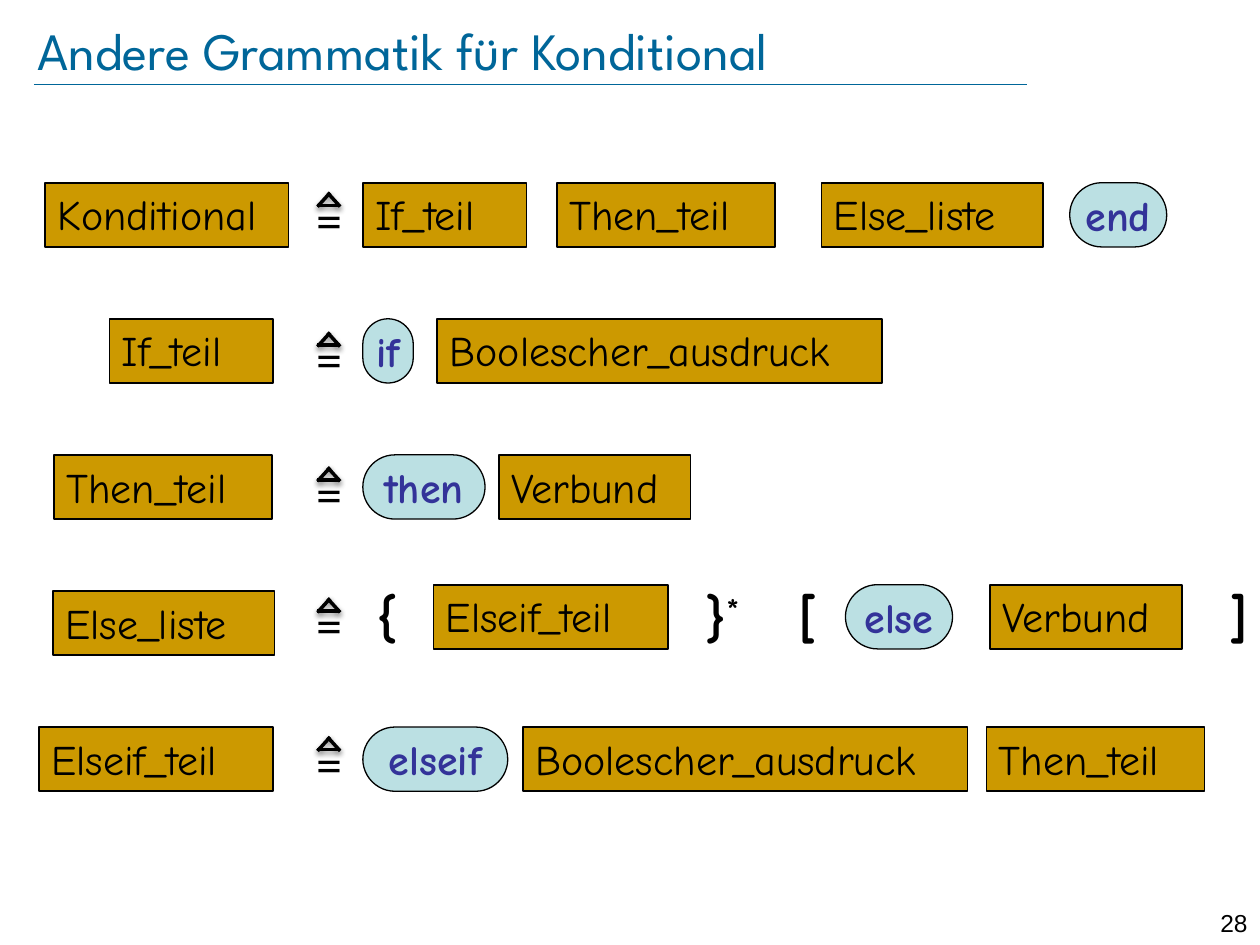
"""Builds a slide with an alternative grammar for the conditional."""
import pptx
import pptx.dml.color
import pptx.enum.shapes
import pptx.enum.text
import pptx.oxml
import pptx.oxml.ns
import pptx.util
from pptx.util import Inches, Pt

SHAPE = pptx.enum.shapes.MSO_SHAPE
ALIGN = pptx.enum.text.PP_ALIGN
ANCHOR = pptx.enum.text.MSO_ANCHOR
COLORS = {"title": "006699", "rule": "CC9900", "keyword": "BBE0E3",
          "keyword_text": "333399", "ink": "000000"}
FONT = "Comic Neue"

WIDTHS = {"Konditional": 1.93, "If_teil": 1.3, "Then_teil": 1.73,
          "Else_liste": 1.76, "Elseif_teil": 1.86, "Verbund": 1.52,
          "Boolescher_ausdruck": 3.53, "if": 0.4, "end": 0.77, "then": 0.97,
          "else": 0.85, "elseif": 1.15, "{": 0.38, "}*": 0.52, "[": 0.37, "]": 0.37}
KEYWORDS = {"if", "then", "else", "elseif", "end"}
BRACKETS = {"{", "}*", "[", "]"}
TOP, PITCH, HEIGHT = 1.45, 1.08, 0.51
SIGN_LEFT, BRACKET_TOP = 2.4, 4.57

PRODUCTIONS = [
    {"name": "Konditional", "left": 0.36, "sign_top": 1.46, "top": 1.45,
     "parts": [("If_teil", 2.88), ("Then_teil", 4.42), ("Else_liste", 6.52),
               ("end", 8.49)]},
    {"name": "If_teil", "left": 0.87, "sign_top": 2.57, "top": 2.53,
     "parts": [("if", 2.88), ("Boolescher_ausdruck", 3.47)]},
    {"name": "Then_teil", "left": 0.43, "sign_top": 3.64, "top": 3.61,
     "parts": [("then", 2.88), ("Verbund", 3.96)]},
    {"name": "Else_liste", "left": 0.42, "sign_top": 4.68, "top": 4.64,
     "parts": [("{", 2.88), ("Elseif_teil", 3.44), ("}*", 5.47), ("[", 6.23),
               ("else", 6.71), ("Verbund", 7.86), ("]", 9.65)]},
    {"name": "Elseif_teil", "left": 0.31, "sign_top": 5.78, "top": 5.77,
     "parts": [("elseif", 2.88), ("Boolescher_ausdruck", 4.15),
               ("Then_teil", 7.83)]},
]
HAT = [(0.2, 0.07, 0.3, 0.18), (0.22, 0.07, 0.12, 0.18), (0.3, 0.17, 0.12, 0.17)]
SHADOW = ('<a:outerShdw blurRad="40000" dist="20000" dir="5400000" rotWithShape="0">'
          '<a:srgbClr val="000000"><a:alpha val="38000"/></a:srgbClr></a:outerShdw>')


def rgb(name):
    return pptx.dml.color.RGBColor.from_string(COLORS[name])


def write(s, runs, size, font=FONT, color="ink", bold=False, align=ALIGN.LEFT,
          anchor=ANCHOR.TOP, wrap=False):
    tf = s.text_frame
    tf.word_wrap = wrap
    tf.vertical_anchor = anchor
    p = tf.paragraphs[0]
    p.alignment = align
    for text in runs:
        r = p.add_run()
        r.text = text
        r.font.size, r.font.name, r.font.bold = Pt(size), font, bold
        r.font.color.rgb = rgb(color)
    return tf


def add_text(slide, box, runs, size, **style):
    s = slide.shapes.add_textbox(*map(Inches, box))
    return write(s, runs, size, **style)


def add_line(slide, ends, color, width, effect=""):
    s = slide.shapes.add_connector(
        pptx.enum.shapes.MSO_CONNECTOR.STRAIGHT, *map(Inches, ends))
    s.line.color.rgb = rgb(color)
    s.line.width = Pt(width)
    ns = pptx.oxml.ns.nsdecls("a")
    s._element.spPr.append(
        pptx.oxml.parse_xml(f"<a:effectLst {ns}>{effect}</a:effectLst>"))


def add_symbol(slide, text, left, top):
    width = WIDTHS[text]
    if text in BRACKETS:
        tf = add_text(slide, (left, BRACKET_TOP, width, 0.64), list(text), 32,
                      bold=True, align=ALIGN.CENTER)
        for r in tf.paragraphs[0].runs[1:]:
            r.font._element.set("baseline", "30000")
        return
    keyword = text in KEYWORDS
    kind = SHAPE.ROUNDED_RECTANGLE if keyword else SHAPE.RECTANGLE
    s = slide.shapes.add_shape(kind, *map(Inches, (left, top, width, HEIGHT)))
    s.shadow.inherit = False
    s.fill.solid()
    s.fill.fore_color.rgb = rgb("keyword" if keyword else "rule")
    s.line.color.rgb = rgb("ink")
    s.line.width = Pt(0.75 if keyword else 1)
    if keyword:
        s.adjustments[0] = 0.5
        write(s, [text], 24, color="keyword_text", bold=True,
              align=ALIGN.CENTER, anchor=ANCHOR.MIDDLE)
    else:
        tf = write(s, [text], 24)
        tf.auto_size = pptx.enum.text.MSO_AUTO_SIZE.SHAPE_TO_FIT_TEXT


def add_defining_sign(slide, left, top):
    add_text(slide, (left, top, 0.42, 0.57), ["="], 28, font="Lato", wrap=True)
    for x1, y1, x2, y2 in HAT:
        add_line(slide, (left + x1, top + y1, left + x2, top + y2), "ink", 2, SHADOW)


def main():
    prs = pptx.Presentation()
    prs.slide_width, prs.slide_height = Inches(10), Inches(7.5)
    slide = prs.slides.add_slide(prs.slide_layouts[6])
    add_line(slide, (0.27, 0.67, 8.15, 0.67), "title", 0.25)
    add_text(slide, (9.45, 7.16, 0.55, 0.24), ["28"], 14, font="Arial",
             align=ALIGN.RIGHT, wrap=True)
    tf = add_text(slide, (0.3, 0.15, 8.91, 0.49), ["Andere Grammatik für Konditional"],
                  30, font="League Spartan", color="title",
                  anchor=ANCHOR.MIDDLE, wrap=True)
    tf.margin_left = tf.margin_right = tf.margin_top = tf.margin_bottom = 0
    for i, production in enumerate(PRODUCTIONS):
        add_symbol(slide, production["name"], production["left"], TOP + i * PITCH)
        add_defining_sign(slide, SIGN_LEFT, production["sign_top"])
        for text, left in production["parts"]:
            add_symbol(slide, text, left, production["top"])
    prs.save("out.pptx")


if __name__ == "__main__":
    main()
